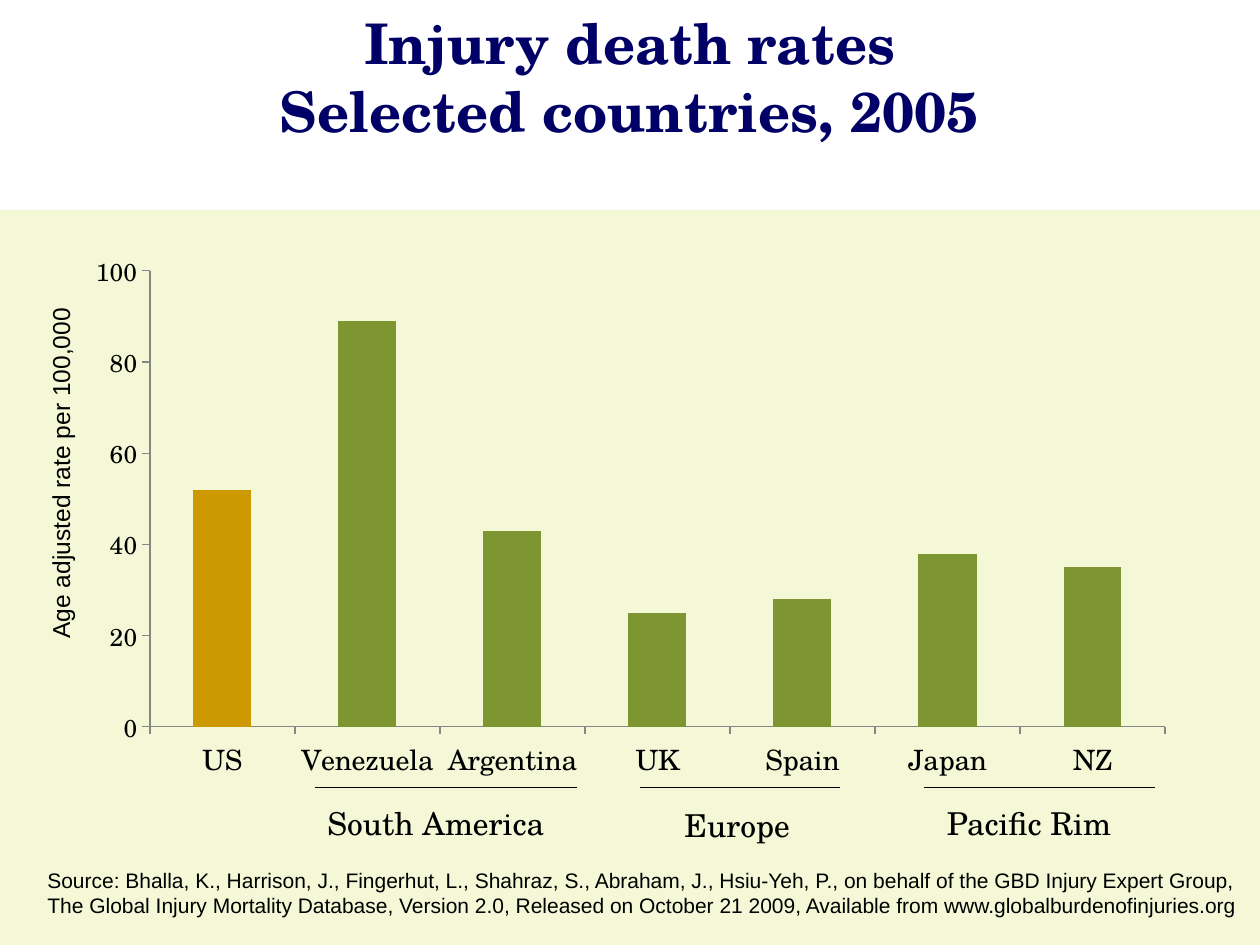
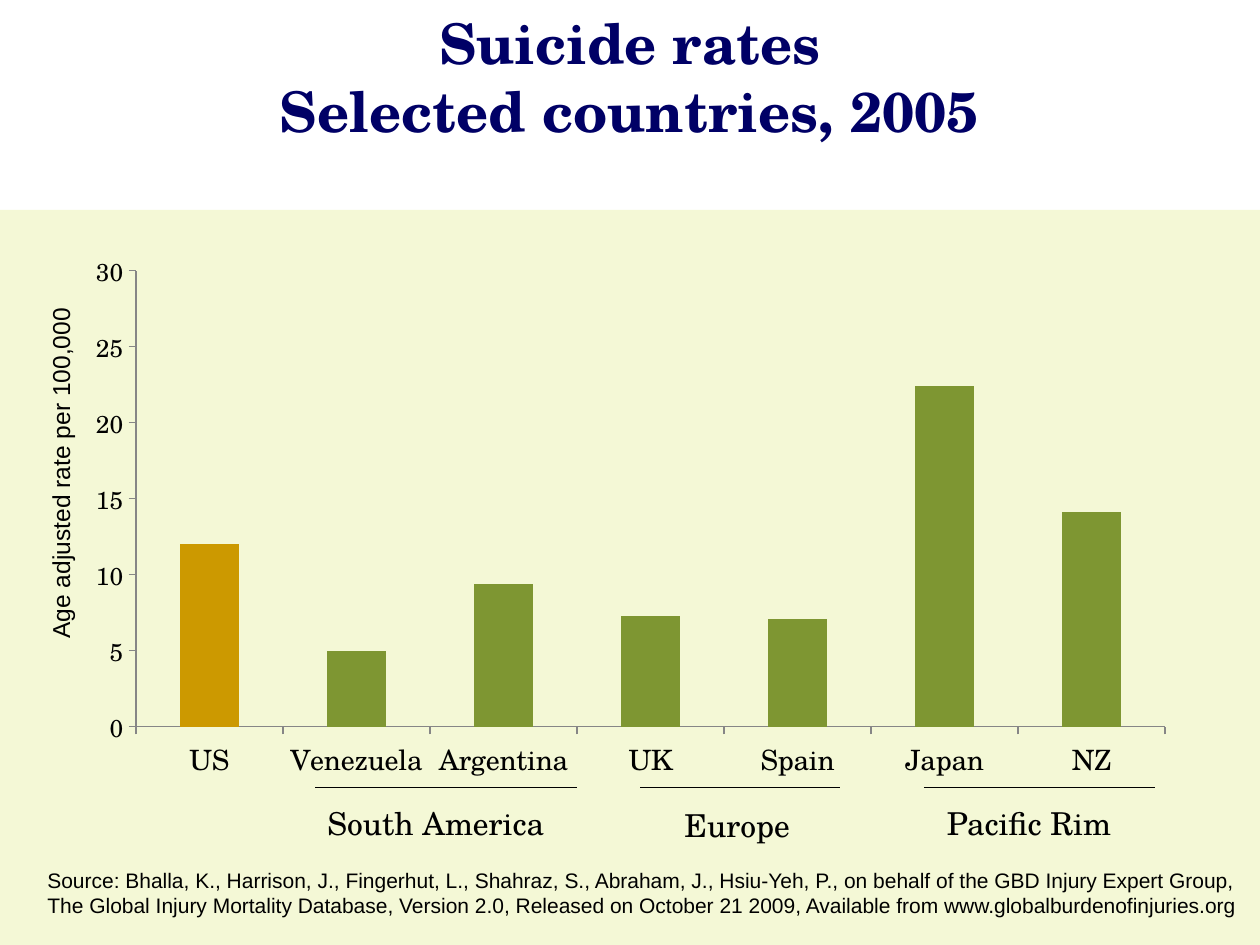
"""Build two slides comparing injury death and suicide rates in selected countries."""
from lxml.etree import SubElement
from pptx import Presentation
from pptx.chart.data import CategoryChartData
from pptx.dml.color import RGBColor
from pptx.enum.chart import XL_CHART_TYPE as ChartType, XL_TICK_MARK as TickMark
from pptx.enum.shapes import MSO_CONNECTOR as Connector, MSO_SHAPE as Shape
from pptx.enum.text import MSO_ANCHOR as Anchor, MSO_AUTO_SIZE as AutoSize, PP_ALIGN as Align
from pptx.oxml.ns import qn
from pptx.util import Pt

NAVY = RGBColor(0x00, 0x00, 0x66)
BLACK = RGBColor(0x00, 0x00, 0x00)
CREAM = RGBColor(0xF4, 0xF8, 0xD6)
OLIVE = RGBColor(0x7E, 0x96, 0x32)
GOLD = RGBColor(0xCC, 0x99, 0x00)
GREY = RGBColor(0x86, 0x86, 0x86)
SERIF = "TeX Gyre Schola"
SANS = "Arial"

COUNTRIES = ["US", "Venezuela", "Argentina", "UK", "Spain", "Japan", "NZ"]
SOURCE = (
    "Source: Bhalla, K., Harrison, J., Fingerhut, L., Shahraz, S., Abraham, J., "
    "Hsiu-Yeh, P., on behalf of the GBD Injury Expert Group,\n"
    "The Global Injury Mortality Database, Version 2.0, Released on October 21 2009, "
    "Available from www.globalburdenofinjuries.org"
)
REGIONS = [
    ("South America", 180, 330, 180, 456, 168),
    ("Europe", 366, 480, 384, 457, 84),
    ("Pacific Rim", 528, 660, 534, 456, 126),
]
RATES = [
    ("Injury death rates", [52, 89, 43, 25, 28, 38, 35], 100, 20),
    ("Suicide rates", [12, 5, 9.4, 7.3, 7.1, 22.4, 14.1], 30, 5),
]


def add_label(slide, text, left, top, width, height, size, font_name, wrap=True):
    box = slide.shapes.add_textbox(Pt(left), Pt(top), Pt(width), Pt(height))
    frame = box.text_frame
    frame.text = text
    frame.word_wrap = wrap
    frame.auto_size = AutoSize.SHAPE_TO_FIT_TEXT
    for paragraph in frame.paragraphs:
        paragraph.font.size = Pt(size)
        paragraph.font.name = font_name
        paragraph.font.color.rgb = BLACK
    return box


presentation = Presentation()
presentation.slide_width, presentation.slide_height = Pt(720), Pt(540)

for heading, values, maximum, step in RATES:
    slide = presentation.slides.add_slide(presentation.slide_layouts[5])

    title = slide.shapes.title
    title.left, title.top, title.width, title.height = Pt(0), Pt(0), Pt(720), Pt(85.5)
    title.text_frame.text = f"{heading}\vSelected countries, 2005"
    title.text_frame.vertical_anchor = Anchor.BOTTOM
    title.text_frame.auto_size = AutoSize.NONE
    paragraph = title.text_frame.paragraphs[0]
    paragraph.alignment = Align.CENTER
    paragraph.font.name = SERIF
    paragraph.font.size = Pt(32)
    paragraph.font.bold = True
    paragraph.font.color.rgb = NAVY

    band = slide.shapes.add_shape(Shape.RECTANGLE, Pt(0), Pt(120), Pt(720), Pt(420))
    band.shadow.inherit = False
    band.fill.solid()
    band.fill.fore_color.rgb = CREAM
    band.line.fill.background()

    data = CategoryChartData()
    data.categories = COUNTRIES
    data.add_series("Series 1", values)
    chart = slide.shapes.add_chart(
        ChartType.COLUMN_CLUSTERED, Pt(42), Pt(138), Pt(636.5), Pt(314), data
    ).chart
    chart.has_legend = False
    chart.has_title = False
    chart.font.name = SERIF
    chart.font.size = Pt(14)
    chart.font.color.rgb = BLACK

    for axis in (chart.category_axis, chart.value_axis):
        axis.has_major_gridlines = False
        axis.major_tick_mark = TickMark.OUTSIDE
        axis.minor_tick_mark = TickMark.NONE
        axis.format.line.color.rgb = GREY
        axis.format.line.width = Pt(0.75)
    category_font = chart.category_axis.tick_labels.font
    category_font.name = SERIF
    category_font.size = Pt(16)
    category_font.color.rgb = BLACK
    chart.value_axis.minimum_scale = 0
    chart.value_axis.maximum_scale = maximum
    chart.value_axis.major_unit = step

    plot = chart.plots[0]
    plot.gap_width = 150
    plot.vary_by_categories = False
    series = plot.series[0]
    for column, color in ((series, OLIVE), (series.points[0], GOLD)):
        column.format.fill.solid()
        column.format.fill.fore_color.rgb = color

    add_label(slide, SOURCE, 20, 492, 700, 36, 12, SANS, wrap=False)
    axis_label = add_label(slide, "Age adjusted rate per 100,000", 22.5, 132, 31.5, 240, 14, SANS)
    axis_label.text_frame._txBody.bodyPr.set("vert", "vert270")

    for region, start, end, left, top, width in REGIONS:
        rule = slide.shapes.add_connector(Connector.STRAIGHT, Pt(start), Pt(450), Pt(end), Pt(450))
        rule.line.color.rgb = BLACK
        rule.line.width = Pt(0.75)
        SubElement(rule._element.spPr, qn("a:effectLst"))
        add_label(slide, region, left, top, width, 29, 18, SERIF)

presentation.save("out.pptx")
